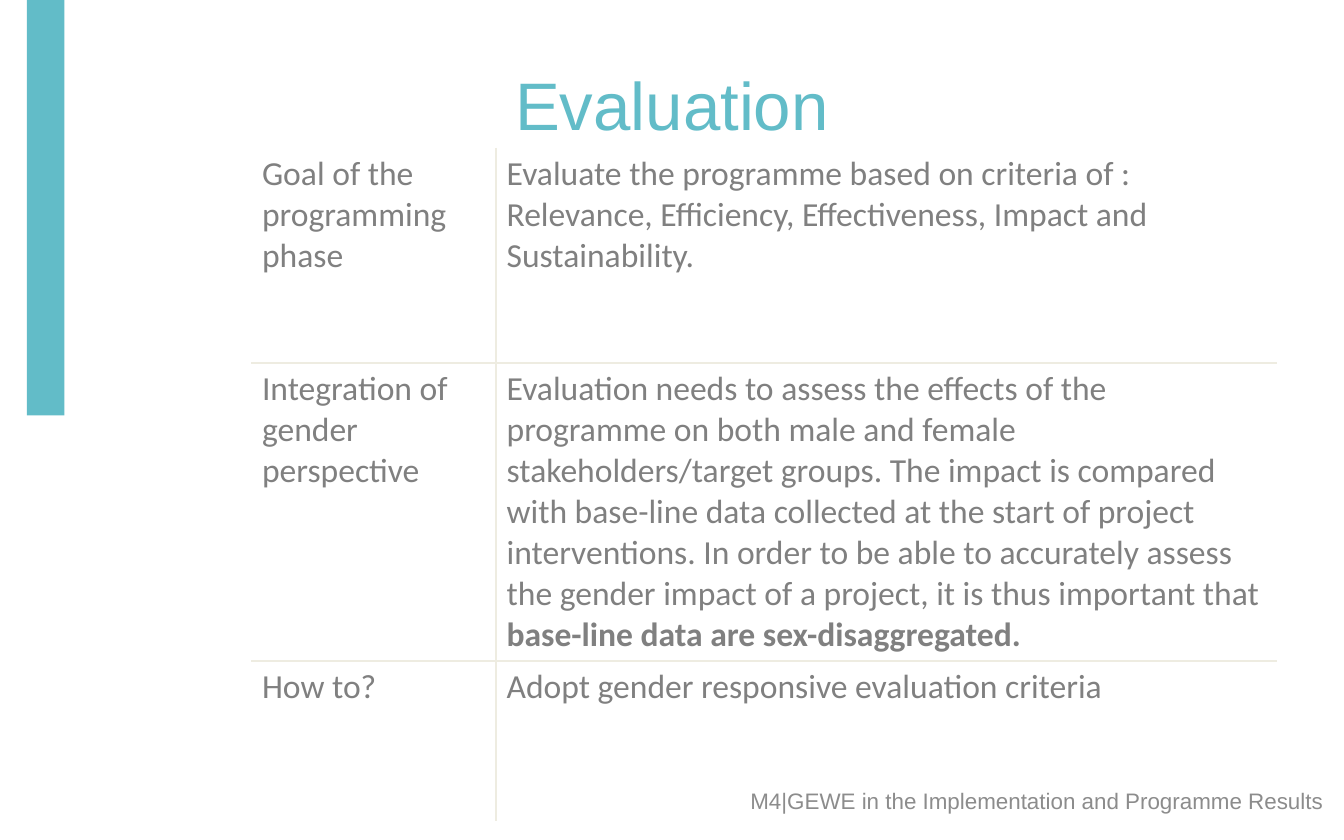
from lxml.etree import SubElement
from pptx import Presentation
from pptx.dml.color import RGBColor
from pptx.enum.shapes import MSO_SHAPE
from pptx.enum.text import MSO_ANCHOR, PP_ALIGN
from pptx.oxml.ns import qn
from pptx.util import Pt

PX = 9144
TEAL = RGBColor(0x62, 0xBC, 0xC8)
GREY = RGBColor(0x80, 0x80, 0x80)
PALE = RGBColor(0x8C, 0x8C, 0x8C)
CREAM = RGBColor(0xEE, 0xEC, 0xE1)

COLS = [182, 581]
ROWS = [160, 222, 119]
CELLS = [
    [["Goal of the programming phase"],
     ["Evaluate the programme based on criteria of : Relevance, Efficiency, "
      "Effectiveness, Impact and Sustainability."]],
    [["Integration of gender perspective"],
     ["Evaluation needs to assess the effects of the programme on both male "
      "and female stakeholders/target groups. The impact is compared with "
      "base-line data collected at the start of project interventions. In "
      "order to be able to accurately assess the gender impact of a project, "
      "it is thus important that ",
      "base-line data are sex-disaggregated."]],
    [["How to?"], ["Adopt gender responsive evaluation criteria"]],
]


def scale(box):
    return [n * PX for n in box]


def add_run(para, text, font, size, color, bold=False):
    run = para.add_run()
    run.text = text
    run.font.name = font
    run.font.size = Pt(size)
    run.font.bold = bold
    run.font.color.rgb = color


def add_bar(slide, box):
    bar = slide.shapes.add_shape(MSO_SHAPE.RECTANGLE, *scale(box))
    bar.shadow.inherit = False
    bar.fill.solid()
    bar.fill.fore_color.rgb = TEAL
    bar.line.fill.background()


def add_label(slide, box, text, size, color, align, anchor, top=5):
    frame = slide.shapes.add_textbox(*scale(box)).text_frame
    frame.word_wrap = True
    frame.vertical_anchor = anchor
    frame.margin_top = top * PX
    frame.margin_right = 15 * PX if align == PP_ALIGN.RIGHT else 10 * PX
    para = frame.paragraphs[0]
    para.alignment = align
    add_run(para, text, "Arial", size, color)


def set_edges(cell, edges):
    props = cell._tc.get_or_add_tcPr()
    for spot, (side, shown) in enumerate(edges.items()):
        line = SubElement(props, qn(f"a:ln{side}"), w=str(Pt(1)))
        if shown:
            fill = SubElement(line, qn("a:solidFill"))
            SubElement(fill, qn("a:srgbClr"), val=str(CREAM))
        else:
            SubElement(line, qn("a:noFill"))
        props.insert(spot, line)


def fill_cell(cell, texts):
    cell.fill.background()
    cell.margin_left = cell.margin_right = 8 * PX
    cell.margin_top = cell.margin_bottom = 4 * PX
    para = cell.text_frame.paragraphs[0]
    for i, text in enumerate(texts):
        add_run(para, text, "Calibri", 18, GREY, bold=i > 0)


def add_grid(slide, left, top):
    box = scale([left, top, sum(COLS), sum(ROWS)])
    table = slide.shapes.add_table(len(ROWS), len(COLS), *box).table
    table.first_row = table.horz_banding = False
    for col, width in zip(table.columns, COLS):
        col.width = width * PX
    for r, height in enumerate(ROWS):
        table.rows[r].height = height * PX
        for c, texts in enumerate(CELLS[r]):
            cell = table.cell(r, c)
            fill_cell(cell, texts)
            set_edges(cell, {"L": c > 0, "R": c < len(COLS) - 1,
                             "T": r > 0, "B": r < len(ROWS) - 1})


def main():
    deck = Presentation()
    deck.slide_width, deck.slide_height = scale([1000, 625])
    slide = deck.slides.add_slide(deck.slide_layouts[6])
    add_bar(slide, [20, 0, 28, 309])
    add_grid(slide, 187, 110)
    add_label(slide, [50, 25, 900, 104], "Evaluation", 36, TEAL,
              PP_ALIGN.CENTER, MSO_ANCHOR.MIDDLE)
    add_label(slide, [362, 585, 638, 41],
              "M4|GEWE in the Implementation and Programme Results", 12, PALE,
              PP_ALIGN.RIGHT, MSO_ANCHOR.TOP, top=1)
    deck.save("out.pptx")


if __name__ == "__main__":
    main()
